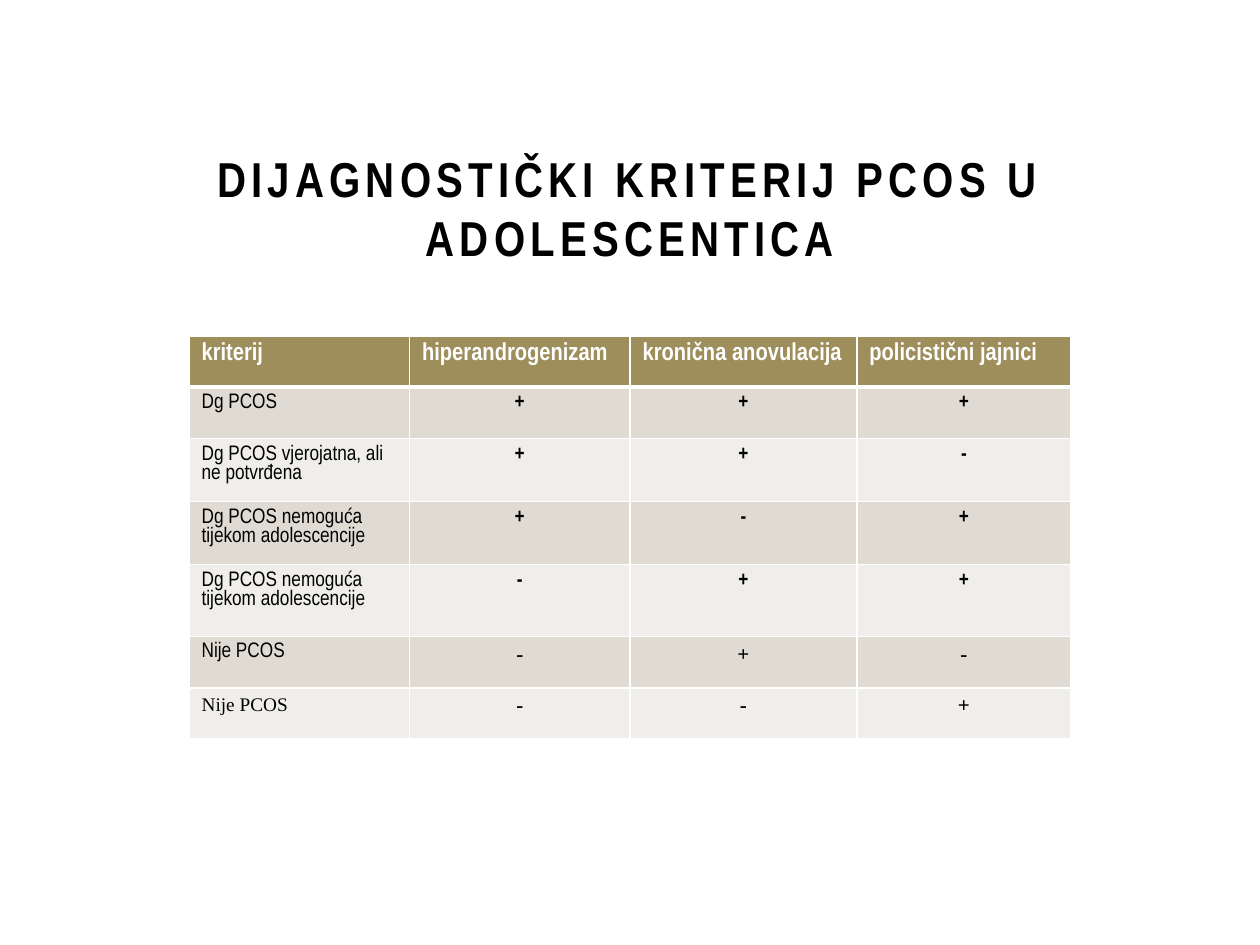
from dataclasses import dataclass

from lxml.etree import SubElement
from pptx import Presentation
from pptx.dml.color import RGBColor
from pptx.enum.text import MSO_ANCHOR, PP_ALIGN
from pptx.oxml.ns import qn
from pptx.util import Inches, Pt


@dataclass(frozen=True)
class Theme:
    sans: str = "Arial Narrow"
    serif: str = "Times New Roman"
    black: str = "000000"
    white: str = "FFFFFF"
    header: str = "9E8E5C"
    bands: tuple = ("DFDBD2", "F0EEEA")
    title_size: int = 28
    header_size: int = 14
    body_size: int = 12
    small_size: int = 11
    border: int = 1
    header_border: int = 3


THEME = Theme()

TITLE = "DIJAGNOSTIČKI KRITERIJ PCOS U ADOLESCENTICA"
HEADERS = ["kriterij", "hiperandrogenizam", "kronična anovulacija", "policistični jajnici"]
# Diagnosis, then one sign for each criterion
ROWS = [
    ("Dg PCOS", "+++"),
    ("Dg PCOS vjerojatna, ali ne potvrđena", "++-"),
    ("Dg PCOS nemoguća tijekom adolescencije", "+-+"),
    ("Dg PCOS nemoguća tijekom adolescencije", "-++"),
    ("Nije PCOS", "-+-"),
    ("Nije PCOS", "--+"),
]
COL_WIDTHS = [1.75, 1.75, 1.8, 1.7]
ROW_HEIGHTS = [0.4, 0.41, 0.41, 0.41, 0.57, 0.41, 0.4]


def write(tf, text, color, align=PP_ALIGN.LEFT, **font):
    p = tf.paragraphs[0]
    p.alignment = align
    r = p.add_run()
    r.text = text
    for key, value in font.items():
        setattr(r.font, key, value)
    r.font.color.rgb = RGBColor.from_string(color)
    return r


def add_title(slide):
    box = slide.shapes.add_textbox(Inches(1.5), Inches(1.41), Inches(7), Inches(0.75))
    tf = box.text_frame
    tf.word_wrap = True
    tf.vertical_anchor = MSO_ANCHOR.BOTTOM
    r = write(tf, TITLE, THEME.black, PP_ALIGN.CENTER,
              name=THEME.sans, size=Pt(THEME.title_size), bold=True)
    r.font._element.set("spc", "300")


def style_cell(cell, fill, top, bottom):
    # Borders come before the fill in the cell properties
    tc_pr = cell._tc.get_or_add_tcPr()
    widths = {"L": THEME.border, "R": THEME.border, "T": top, "B": bottom}
    for side, width in widths.items():
        ln = SubElement(tc_pr, qn(f"a:ln{side}"), w=str(Pt(width)))
        solid = SubElement(ln, qn("a:solidFill"))
        SubElement(solid, qn("a:srgbClr"), val=THEME.white)
    cell.fill.solid()
    cell.fill.fore_color.rgb = RGBColor.from_string(fill)


def fill_header(table):
    for col, text in enumerate(HEADERS):
        cell = table.cell(0, col)
        style_cell(cell, THEME.header, THEME.border, THEME.header_border)
        write(cell.text_frame, text, THEME.white,
              name=THEME.sans, size=Pt(THEME.header_size), bold=True)


def fill_row(table, row, label, signs):
    last = len(ROWS)
    top = THEME.header_border if row == 1 else THEME.border
    for col, text in enumerate([label, *signs]):
        is_sign = col > 0
        # The last row is serif throughout, the one above only in its signs
        serif = row == last or (row == last - 1 and is_sign)
        size = THEME.small_size if row == last and not is_sign else THEME.body_size
        cell = table.cell(row, col)
        style_cell(cell, THEME.bands[(row - 1) % 2], top, THEME.border)
        write(cell.text_frame, text, THEME.black,
              PP_ALIGN.CENTER if is_sign else PP_ALIGN.LEFT,
              name=THEME.serif if serif else THEME.sans,
              size=Pt(size), bold=is_sign)


def add_criteria_table(slide):
    frame = slide.shapes.add_table(len(ROW_HEIGHTS), len(COL_WIDTHS), Inches(1.5),
                                   Inches(2.67), Inches(7), Inches(sum(ROW_HEIGHTS)))
    table = frame.table
    for column, width in zip(table.columns, COL_WIDTHS):
        column.width = Inches(width)
    for table_row, height in zip(table.rows, ROW_HEIGHTS):
        table_row.height = Inches(height)
    fill_header(table)
    for row, (label, signs) in enumerate(ROWS, start=1):
        fill_row(table, row, label, signs)


def main():
    prs = Presentation()
    prs.slide_width, prs.slide_height = Inches(10), Inches(7.5)
    s = prs.slides.add_slide(prs.slide_layouts[6])
    add_title(s)
    add_criteria_table(s)
    prs.save("out.pptx")


if __name__ == "__main__":
    main()
